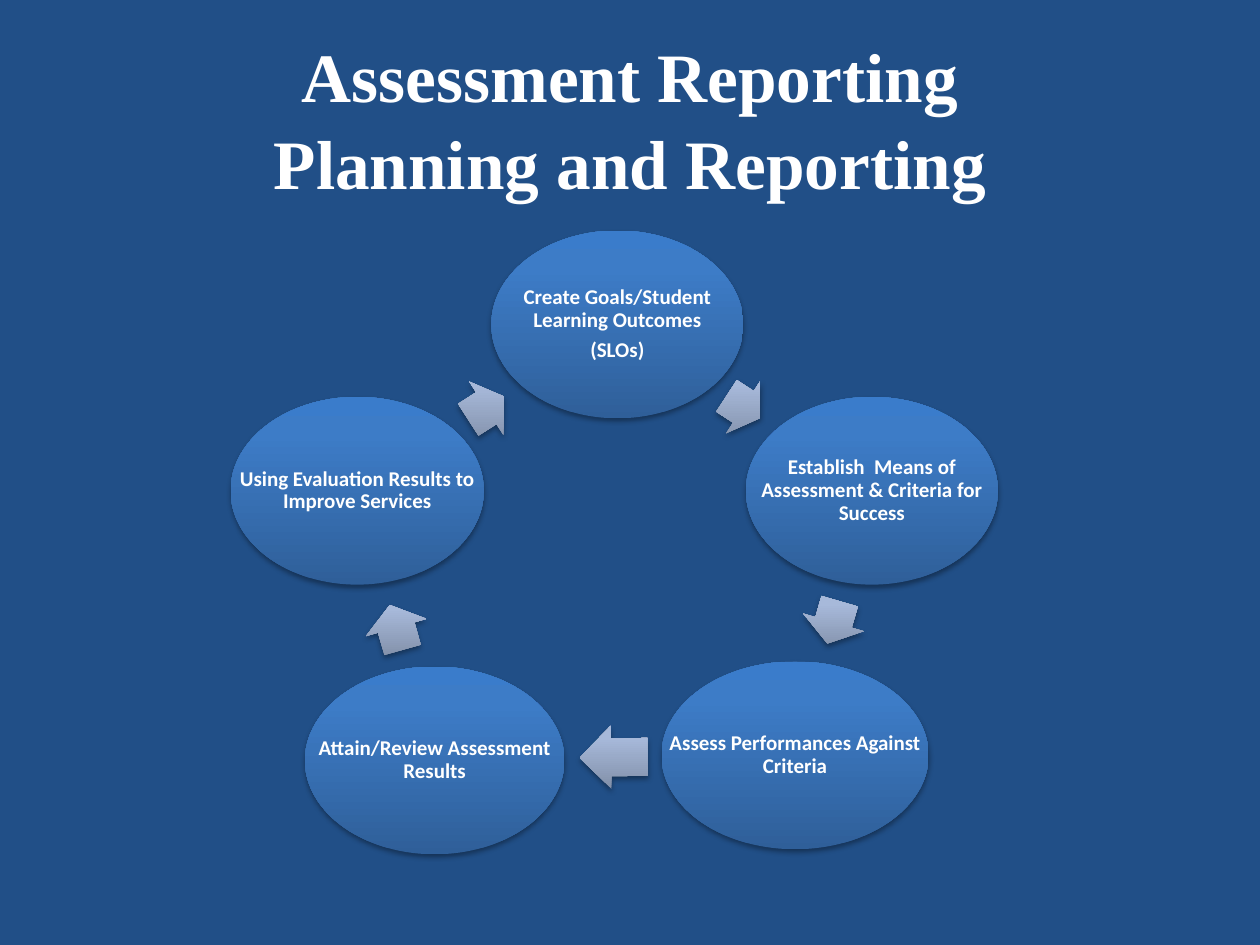
from lxml import etree
from pptx import Presentation
from pptx.dml.color import RGBColor
from pptx.enum.shapes import MSO_SHAPE
from pptx.enum.text import MSO_ANCHOR, MSO_AUTO_SIZE, PP_ALIGN
from pptx.oxml.ns import qn
from pptx.util import Inches, Pt

OVAL, ARROW = MSO_SHAPE.OVAL, MSO_SHAPE.RIGHT_ARROW
MIDDLE, CENTER = MSO_ANCHOR.MIDDLE, PP_ALIGN.CENTER
NO_AUTOSIZE = MSO_AUTO_SIZE.NONE

NAVY = RGBColor(0x21, 0x4F, 0x87)
WHITE = RGBColor(0xFF, 0xFF, 0xFF)
BLACK = RGBColor(0, 0, 0)
STEP_COLORS = (RGBColor(0x2F, 0x5F, 0x99), RGBColor(0x3D, 0x7C, 0xC7), RGBColor(0x3A, 0x7C, 0xCB))
ARROW_COLORS = (RGBColor(0x81, 0x8F, 0xA8), RGBColor(0xA7, 0xB9, 0xDA), RGBColor(0xA7, 0xBA, 0xDC))
GRADIENT_STOPS = (0, 80, 100)

TITLE_BOX = (0.5, 0.3, 9, 1.25)
CYCLE_BOX = (1.83, 1.83, 6.09, 4.95)
STEP_HEIGHT, ARROW_HEIGHT = 1.49, 0.5

STEPS = [
    (2.07, 0, 2, "Create Goals/Student Learning Outcomes\n(SLOs)"),
    (4.09, 1.32, 2, "Establish  Means of Assessment & Criteria for Success"),
    (3.42, 3.42, 2.12, "Assess Performances Against Criteria"),
    (0.59, 3.46, 2.06, "Attain/Review Assessment Results"),
    (0, 1.32, 2.01, "Using Evaluation Results to Improve Services"),
]
ARROWS = [
    (3.91, 1.15, 0.32, 33.2),
    (4.61, 2.86, 0.35, 106.2),
    (2.77, 3.93, 0.54, 179.2),
    (1.13, 2.9, 0.37, 254.1),
    (1.86, 1.16, 0.34, 327.4),
]


def add_color(parent, color, alpha=None):
    element = etree.SubElement(parent, qn("a:srgbClr"), val=str(color))
    if alpha:
        etree.SubElement(element, qn("a:alpha"), val=str(alpha * 1000))


def style_shape(shape, colors):
    shape.line.fill.background()
    shape.fill.gradient()
    gradient = shape.fill._xPr.find(qn("a:gradFill"))
    gradient.set("rotWithShape", "0")
    for child in list(gradient):
        gradient.remove(child)
    stops = etree.SubElement(gradient, qn("a:gsLst"))
    for position, color in zip(GRADIENT_STOPS, colors):
        add_color(etree.SubElement(stops, qn("a:gs"), pos=str(position * 1000)), color)
    etree.SubElement(gradient, qn("a:lin"), ang=str(270 * 60000), scaled="0")
    shape.shadow.inherit = False
    effects = shape._element.spPr.find(qn("a:effectLst"))
    shadow = etree.SubElement(
        effects, qn("a:outerShdw"), blurRad=str(Pt(3.1)), dist=str(Pt(1.8)),
        dir=str(90 * 60000), rotWithShape="0")
    add_color(shadow, BLACK, 35)


def format_text(text_frame, font_name, size):
    text_frame.word_wrap = True
    text_frame.auto_size = NO_AUTOSIZE
    text_frame.vertical_anchor = MIDDLE
    for paragraph in text_frame.paragraphs:
        paragraph.alignment = CENTER
        for run in paragraph.runs:
            run.font.name = font_name
            run.font.size = Pt(size)
            run.font.bold = True
            run.font.color.rgb = WHITE


def add_title(slide, box):
    title = slide.shapes.title
    title.left, title.top, title.width, title.height = map(Inches, box)
    title.text_frame.text = "Assessment Reporting\vPlanning and Reporting"
    format_text(title.text_frame, "Times New Roman", 39.6)
    title.text_frame.paragraphs[0].line_spacing = 1.04


def add_step(shapes, left, top, width, label):
    box = [Inches(value) for value in (left, top, width, STEP_HEIGHT)]
    style_shape(shapes.add_shape(OVAL, *box), STEP_COLORS)
    text_frame = shapes.add_textbox(*box).text_frame
    text_frame.text = label
    text_frame.margin_left = text_frame.margin_right = Inches(0.02)
    text_frame.margin_top = text_frame.margin_bottom = Inches(0.02)
    format_text(text_frame, "Calibri", 12)
    for paragraph in text_frame.paragraphs:
        paragraph.line_spacing = 0.9
        paragraph.space_after = Pt(4.2)


def add_arrow(shapes, left, top, width, rotation):
    arrow = shapes.add_shape(
        ARROW, Inches(left), Inches(top), Inches(width), Inches(ARROW_HEIGHT))
    arrow.adjustments[0] = 0.6
    arrow.adjustments[1] = 0.5
    arrow.rotation = rotation
    style_shape(arrow, ARROW_COLORS)


def add_cycle(slide, box):
    left, top = box[:2]
    shapes = slide.shapes.add_group_shape().shapes
    for (step_x, step_y, step_width, label), (arrow_x, arrow_y, arrow_width, rotation) in zip(STEPS, ARROWS):
        add_step(shapes, left + step_x, top + step_y, step_width, label)
        add_arrow(shapes, left + arrow_x, top + arrow_y, arrow_width, rotation)


def main():
    presentation = Presentation()
    presentation.slide_width, presentation.slide_height = Inches(10), Inches(7.5)
    slide = presentation.slides.add_slide(presentation.slide_layouts[5])
    slide.background.fill.solid()
    slide.background.fill.fore_color.rgb = NAVY
    add_title(slide, TITLE_BOX)
    add_cycle(slide, CYCLE_BOX)
    presentation.save("out.pptx")


if __name__ == "__main__":
    main()
